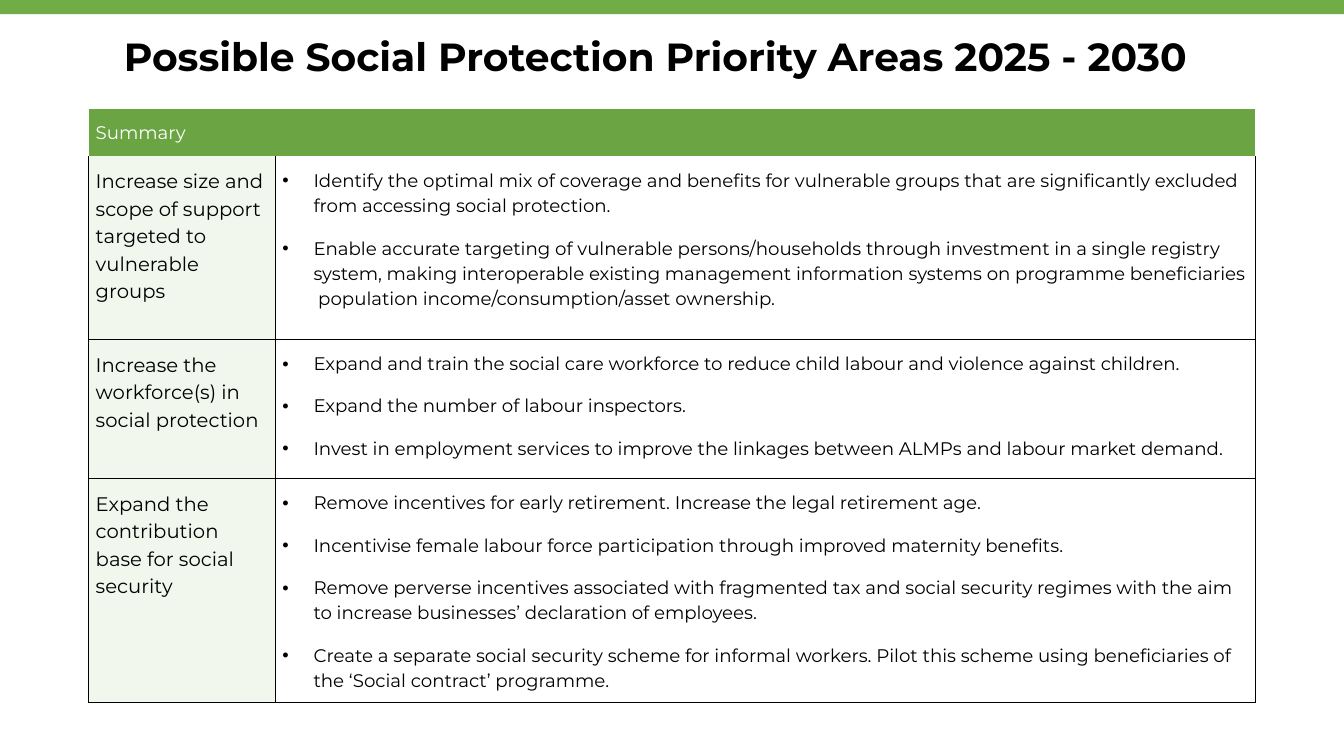
import dataclasses

import lxml.etree
import pptx
import pptx.dml.color
import pptx.enum.shapes
import pptx.oxml.ns
import pptx.util

Inches = pptx.util.Inches
Pt = pptx.util.Pt
qn = pptx.oxml.ns.qn


@dataclasses.dataclass(frozen=True)
class Theme:
    """Colours, font and type sizes of the slide."""
    font: str = "Montserrat"
    band: str = "70AD47"
    header: str = "6AA443"
    area: str = "F1F7ED"
    text: str = "000000"
    inverse: str = "FFFFFF"
    rule: str = "000000"
    title_size: int = 28
    area_size: int = 14
    body_size: int = 13
    rule_width: float = 0.75
    plain_table: str = "{2D5ABB26-0587-4C30-8999-92F81FD0307C}"


class SlideBuilder:
    """Draws styled elements on one slide."""

    def __init__(self, slide, theme):
        self.slide = slide
        self.theme = theme

    def colour(self, value):
        """Return an RGB colour from its hex value."""
        return pptx.dml.color.RGBColor.from_string(value)

    def bar(self, left, top, width, height, fill):
        """Add a plain filled rectangle."""
        bar = self.slide.shapes.add_shape(
            pptx.enum.shapes.MSO_SHAPE.RECTANGLE,
            Inches(left), Inches(top), Inches(width), Inches(height))
        bar.shadow.inherit = False
        bar.fill.solid()
        bar.fill.fore_color.rgb = self.colour(fill)
        bar.line.fill.background()

    def set_lines(self, frame, lines, size, colour, bold=False, bulleted=False):
        """Fill a text frame with one styled paragraph per line."""
        frame.text = "\n".join(lines)
        for paragraph in frame.paragraphs:
            paragraph.line_spacing = 1.15
            paragraph.space_before = paragraph.space_after = Pt(6)
            for run in paragraph.runs:
                run.font.name = self.theme.font
                run.font.size = Pt(size)
                run.font.bold = bold
                run.font.color.rgb = self.colour(colour)
            if bulleted:
                self.bullet(paragraph)

    def bullet(self, paragraph):
        """Give a paragraph a hanging bullet."""
        properties = paragraph._p.get_or_add_pPr()
        properties.set("marL", str(Inches(0.31)))
        properties.set("indent", str(-Inches(0.31)))
        lxml.etree.SubElement(properties, qn("a:buFont"), typeface="Arial")
        lxml.etree.SubElement(properties, qn("a:buChar"), char="•")

    def title(self, left, top, width, height, wording):
        """Add the slide title."""
        title = self.slide.shapes.add_textbox(
            Inches(left), Inches(top), Inches(width), Inches(height))
        title.text_frame.word_wrap = True
        self.set_lines(title.text_frame, [wording], self.theme.title_size,
                       self.theme.text, bold=True)

    def table(self, left, top, widths, heights):
        """Add an unstyled table with the given column and row sizes."""
        frame = self.slide.shapes.add_table(
            len(heights), len(widths), Inches(left), Inches(top),
            Inches(sum(widths)), Inches(sum(heights)))
        table = frame.table
        table.first_row = table.horz_banding = False
        table._tbl.tblPr.find(qn("a:tableStyleId")).text = self.theme.plain_table
        for column, width in zip(table.columns, widths):
            column.width = Inches(width)
        for row, height in zip(table.rows, heights):
            row.height = Inches(height)
        return table

    def cell(self, cell, lines, size, colour, fill=None, sides="", bulleted=False):
        """Set one table cell's text, fill and ruled sides."""
        cell.margin_left = cell.margin_right = Inches(0.07)
        cell.margin_top = cell.margin_bottom = Inches(0.1)
        self.set_lines(cell.text_frame, lines, size, colour, bulleted=bulleted)
        if fill:
            cell.fill.solid()
            cell.fill.fore_color.rgb = self.colour(fill)
        else:
            cell.fill.background()
        properties = cell._tc.get_or_add_tcPr()
        for position, side in enumerate(sides):
            rule = lxml.etree.Element(
                qn(f"a:ln{side}"), w=str(Pt(self.theme.rule_width)))
            solid = lxml.etree.SubElement(rule, qn("a:solidFill"))
            lxml.etree.SubElement(solid, qn("a:srgbClr"), val=self.theme.rule)
            properties.insert(position, rule)


PRIORITIES = [
    ("Increase size and scope of support targeted to vulnerable groups", [
        "Identify the optimal mix of coverage and benefits for vulnerable groups "
        "that are significantly excluded from accessing social protection.",
        "Enable accurate targeting of vulnerable persons/households through "
        "investment in a single registry system, making interoperable existing "
        "management information systems on programme beneficiaries "
        " population income/consumption/asset ownership.",
    ]),
    ("Increase the workforce(s) in social protection", [
        "Expand and train the social care workforce to reduce child labour and "
        "violence against children.",
        "Expand the number of labour inspectors.",
        "Invest in employment services to improve the linkages between ALMPs and "
        "labour market demand.",
    ]),
    ("Expand the contribution base for social security", [
        "Remove incentives for early retirement. Increase the legal retirement age.",
        "Incentivise female labour force participation through improved maternity "
        "benefits.",
        "Remove perverse incentives associated with fragmented tax and social "
        "security regimes with the aim to increase businesses’ declaration of "
        "employees.",
        "Create a separate social security scheme for informal workers. Pilot this "
        "scheme using beneficiaries of the ‘Social contract’ programme.",
    ]),
]


def main():
    """Build and save the slide."""
    deck = pptx.Presentation()
    deck.slide_width, deck.slide_height = Inches(13.33), Inches(7.5)
    theme = Theme()
    builder = SlideBuilder(deck.slides.add_slide(deck.slide_layouts[6]), theme)

    builder.bar(0, 0, 13.33, 0.14, theme.band)
    summary = builder.table(0.88, 1.08, [1.85, 9.72], [0.47, 1.82, 1.38, 2.21])
    heading = summary.cell(0, 0)
    heading.merge(summary.cell(0, 1))
    builder.cell(heading, ["Summary"], theme.body_size, theme.inverse, theme.header)
    for row, (area, actions) in enumerate(PRIORITIES, start=1):
        sides = "LRB" if row == 1 else "LRTB"
        builder.cell(summary.cell(row, 0), [area], theme.area_size, theme.text,
                     theme.area, sides)
        builder.cell(summary.cell(row, 1), actions, theme.body_size, theme.text,
                     sides=sides, bulleted=True)
    builder.title(1.13, 0.2, 10.95, 0.81,
                  "Possible Social Protection Priority Areas 2025 - 2030")
    deck.save("out.pptx")


if __name__ == "__main__":
    main()
